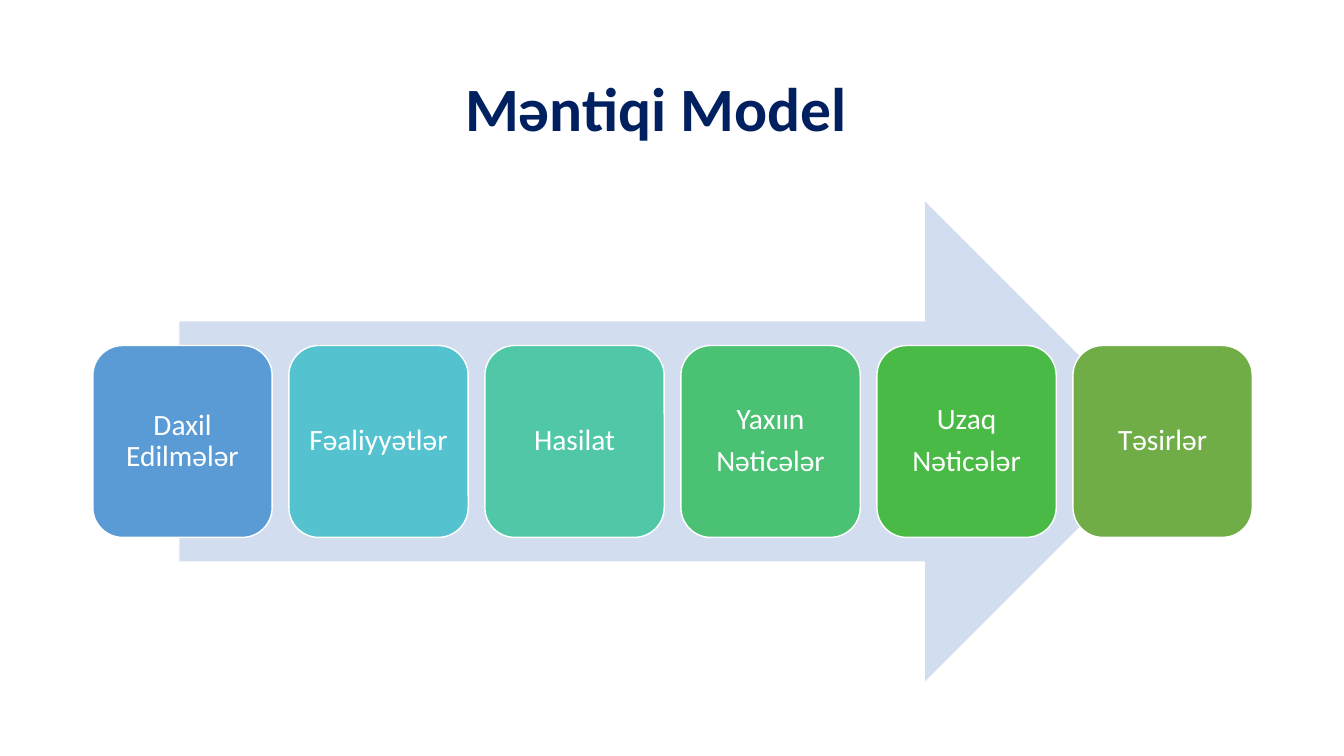
from pptx import Presentation
from pptx.dml.color import RGBColor
from pptx.enum.shapes import MSO_SHAPE
from pptx.enum.text import MSO_ANCHOR, PP_ALIGN
from pptx.util import Cm, Pt

# Content
TITLE = "Məntiqi Model"
STAGES = [
    ("Daxil Edilmələr", "blue"),
    ("Fəaliyyətlər", "cyan"),
    ("Hasilat", "teal"),
    ("Yaxıın\nNəticələr", "mint"),
    ("Uzaq\nNəticələr", "green"),
    ("Təsirlər", "olive"),
]
COLOURS = {
    "navy": "002060", "white": "FFFFFF", "arrow": "D2DEEF",
    "blue": "5B9BD5", "cyan": "55C3CF", "teal": "50C8A7",
    "mint": "4BC174", "green": "4ABA46", "olive": "70AD47",
}

# Layout in centimetres
ARROW_LEFT, ARROW_TOP, ARROW_WIDTH, ARROW_HEIGHT = 4.52, 5.08, 24.84, 12.09
STAGE_LEFT, STAGE_WIDTH, STAGE_STEP = 2.34, 4.52, 4.94
STAGE_HEIGHT = ARROW_HEIGHT * 0.4
STAGE_TOP = ARROW_TOP + (ARROW_HEIGHT - STAGE_HEIGHT) / 2
STAGE_INSET = 0.23


def colour(name):
    return RGBColor.from_string(COLOURS[name])


def write(box, text, size, ink, bold=False, space_after=0):
    frame = box.text_frame
    frame.text = text
    frame.word_wrap = True
    frame.vertical_anchor = MSO_ANCHOR.MIDDLE
    for para in frame.paragraphs:
        para.alignment = PP_ALIGN.CENTER
        para.line_spacing = 0.9
        para.space_after = Pt(space_after)
        for span in para.runs:
            span.font.name = "Calibri"
            span.font.size = Pt(size)
            span.font.bold = bold
            span.font.color.rgb = colour(ink)


def add_block(page, kind, left, top, width, height, fill):
    block = page.shapes.add_shape(kind, Cm(left), Cm(top), Cm(width), Cm(height))
    block.shadow.inherit = False
    block.fill.solid()
    block.fill.fore_color.rgb = colour(fill)
    block.line.fill.background()
    return block


def add_stage(page, index, text, fill):
    stage = add_block(page, MSO_SHAPE.ROUNDED_RECTANGLE,
                      STAGE_LEFT + index * STAGE_STEP, STAGE_TOP,
                      STAGE_WIDTH, STAGE_HEIGHT, fill)
    stage.line.color.rgb = colour("white")
    stage.line.width = Pt(1)
    frame = stage.text_frame
    frame.margin_left = frame.margin_right = Cm(STAGE_INSET)
    frame.margin_top = frame.margin_bottom = Cm(STAGE_INSET)
    write(stage, text, 21, "white", space_after=7.35)


def main():
    deck = Presentation()
    deck.slide_width, deck.slide_height = Cm(33.87), Cm(19.05)
    page = deck.slides.add_slide(deck.slide_layouts[6])

    # Title
    title = page.shapes.add_textbox(Cm(1.93), Cm(1.24), Cm(29.21), Cm(3.15))
    write(title, TITLE, 44, "navy", bold=True)

    # Arrow behind the stages
    add_block(page, MSO_SHAPE.RIGHT_ARROW, ARROW_LEFT, ARROW_TOP,
              ARROW_WIDTH, ARROW_HEIGHT, "arrow")

    # Stages from left to right
    for index, (text, fill) in enumerate(STAGES):
        add_stage(page, index, text, fill)

    deck.save("out.pptx")


if __name__ == "__main__":
    main()
